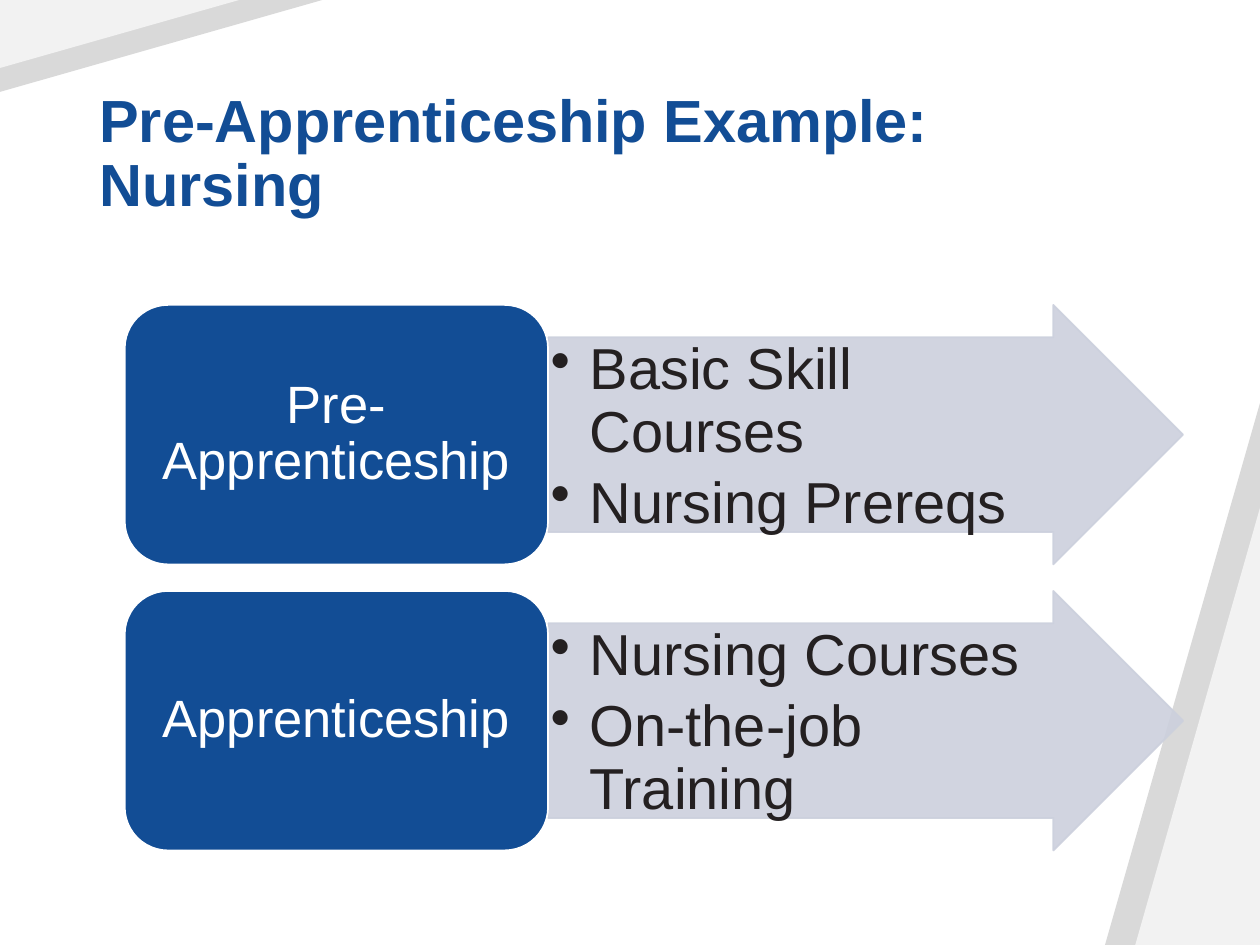
from lxml.etree import SubElement
from pptx import Presentation
from pptx.dml.color import RGBColor
from pptx.enum.shapes import MSO_SHAPE
from pptx.enum.text import MSO_ANCHOR, PP_ALIGN
from pptx.oxml.ns import qn
from pptx.util import Inches, Pt

WIDE, HIGH = 10, 7.5
COLORS = {"blue": "124D95", "white": "FFFFFF", "ink": "242021",
          "mist": "CCD0DD", "gray": "D9D9D9", "pale": "F2F2F2"}
LEFT, MID, TOP = 0.99, 4.35, 2.42
CARD, ARROW, TALL, STEP = 3.36, 5.04, 2.06, 2.27
ROWS = [
    ("Pre-Apprenticeship", ["Basic Skill Courses", "Nursing Prereqs"]),
    ("Apprenticeship", ["Nursing Courses", "On-the-job Training"]),
]


def color(name):
    return RGBColor.from_string(COLORS[name])


def fade(form, share):
    for node in form._element.spPr.iter(qn("a:srgbClr")):
        SubElement(node, qn("a:alpha"), val=str(share * 1000))


def add_form(slide, kind, box, fill, line=None):
    form = slide.shapes.add_shape(kind, *map(Inches, box))
    form.shadow.inherit = False
    form.fill.solid()
    form.fill.fore_color.rgb = color(fill)
    if line:
        form.line.color.rgb = color(line)
        form.line.width = Pt(1)
    else:
        form.line.fill.background()
    return form


def add_wedge(slide, box, fill, turn=False):
    wedge = add_form(slide, MSO_SHAPE.ISOSCELES_TRIANGLE, box, fill)
    wedge.adjustments[0] = 1
    if turn:
        wedge.rotation = 270
        wedge._element.spPr.find(qn("a:xfrm")).set("flipV", "1")


def add_bullet(para):
    para.level = 1
    props = para._p.get_or_add_pPr()
    props.set("marL", str(Inches(0.31)))
    props.set("indent", str(-Inches(0.31)))
    SubElement(props, qn("a:buChar"), char="•")


def add_text(slide, box, lines, size, ink, pad=(0.1, 0.05), anchor=MSO_ANCHOR.TOP,
             align=PP_ALIGN.LEFT, after=0, bold=False, dots=False):
    frame = slide.shapes.add_textbox(*map(Inches, box)).text_frame
    frame.word_wrap = True
    frame.vertical_anchor = anchor
    frame.margin_left = frame.margin_right = Inches(pad[0])
    frame.margin_top = frame.margin_bottom = Inches(pad[1])
    for spot, line in enumerate(lines):
        para = frame.add_paragraph() if spot else frame.paragraphs[0]
        para.text = line
        if dots:
            add_bullet(para)
        para.alignment = align
        para.line_spacing = 0.9
        para.space_after = Pt(after)
        font = para.font
        font.name, font.size, font.bold = "Arial", Pt(size), bold
        font.color.rgb = color(ink)


def add_row(slide, top, label, items):
    arrow = add_form(slide, MSO_SHAPE.RIGHT_ARROW, (MID, top, ARROW, TALL), "mist", "mist")
    arrow.adjustments[0], arrow.adjustments[1] = 0.75, 0.5
    fade(arrow, 90)
    add_text(slide, (MID, top + TALL / 8, 4.27, TALL * 0.75), items, 33, "ink",
             pad=(0.02, 0.02), after=5, dots=True)
    add_form(slide, MSO_SHAPE.ROUNDED_RECTANGLE, (LEFT, top, CARD, TALL), "blue", "white")
    add_text(slide, (LEFT + 0.1, top + 0.1, CARD - 0.2, TALL - 0.2), [label], 30, "white",
             pad=(0.12, 0.06), anchor=MSO_ANCHOR.MIDDLE, align=PP_ALIGN.CENTER, after=10.5)


def main():
    deck = Presentation()
    deck.slide_width, deck.slide_height = Inches(WIDE), Inches(HIGH)
    slide = deck.slides.add_slide(deck.slide_layouts[6])
    for fill, wide, high in (("gray", 1.23, 4.3), ("pale", 0.99, 3.47)):
        add_wedge(slide, (WIDE - wide, HIGH - high, wide, high), fill)
    for fill, wide, high in (("gray", 0.73, 2.56), ("pale", 0.54, 1.9)):
        edge = (high - wide) / 2
        add_wedge(slide, (edge, -edge, wide, high), fill, turn=True)
    add_text(slide, (0.69, 0.64, 8.7, 1.15), ["Pre-Apprenticeship Example:\vNursing"],
             34, "blue", anchor=MSO_ANCHOR.BOTTOM, bold=True)
    for spot, (label, items) in enumerate(ROWS):
        add_row(slide, TOP + spot * STEP, label, items)
    deck.save("out.pptx")


if __name__ == "__main__":
    main()
